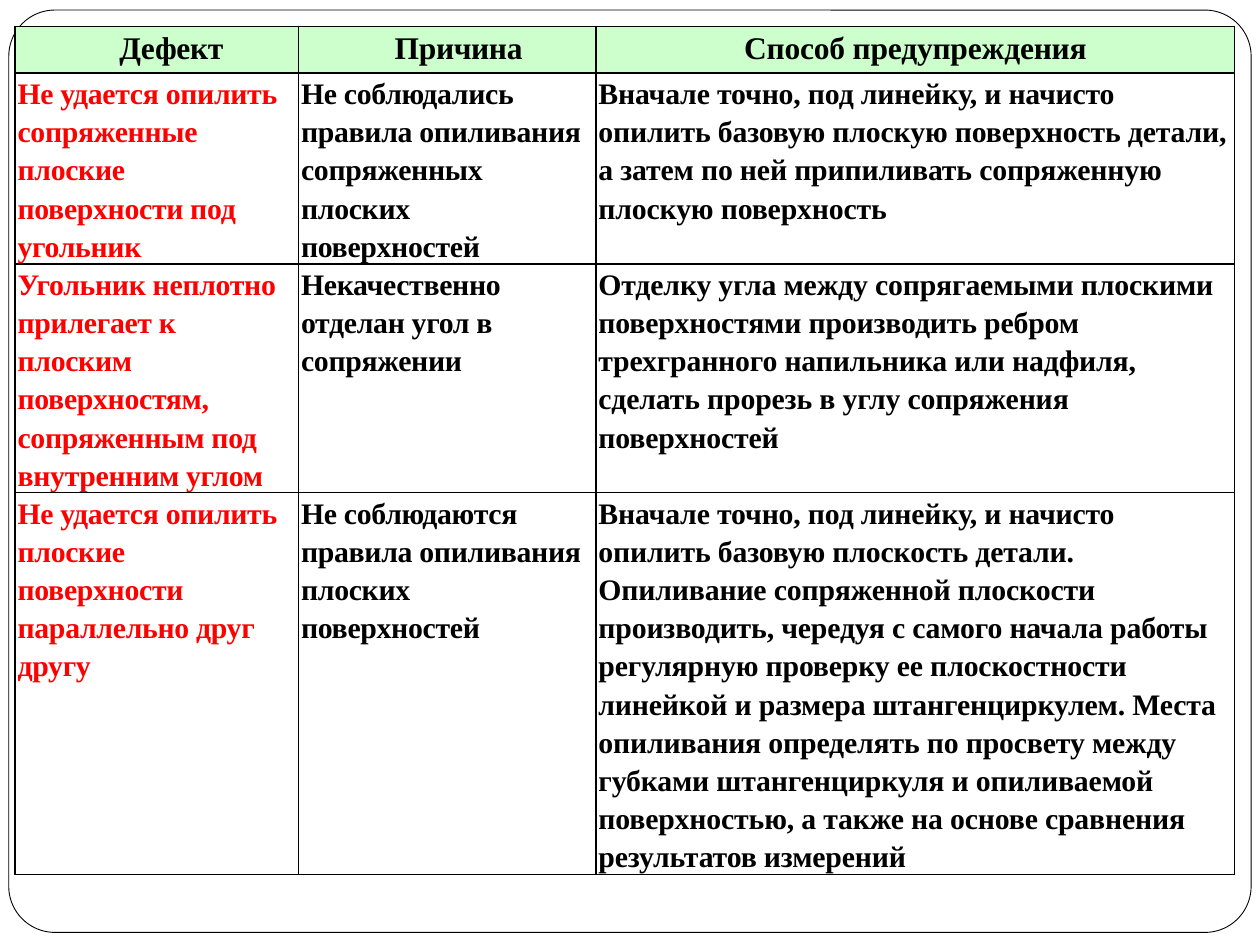
from pptx import Presentation
from pptx import util as u
from pptx.dml.color import RGBColor
from pptx.enum import shapes, text
from pptx.oxml import parse_xml
from pptx.oxml.ns import nsdecls

BLACK, RED, WHITE, GREEN = "000000", "FF0000", "FFFFFF", "CCFFCC"
HEADERS = ["Дефект", "Причина", "Способ предупреждения"]
DEFECTS = [
    ["Не удается опилить сопряженные плоские поверхности под угольник",
     "Не соблюдались правила опиливания сопряженных плоских поверхностей",
     "Вначале точно, под линейку, и начисто опилить базовую плоскую поверхность детали, "
     "а затем по ней припиливать сопряженную плоскую поверхность"],
    ["Угольник неплотно прилегает к плоским поверхностям, сопряженным под внутренним углом",
     "Некачественно отделан угол в сопряжении",
     "Отделку угла между сопрягаемыми плоскими поверхностями производить ребром трехгранного "
     "напильника или надфиля, сделать прорезь в углу сопряжения поверхностей"],
    ["Не удается опилить плоские поверхности параллельно друг другу",
     "Не соблюдаются правила опиливания плоских поверхностей",
     "Вначале точно, под линейку, и начисто опилить базовую плоскость детали. "
     "Опиливание сопряженной плоскости производить, чередуя с самого начала работы "
     "регулярную проверку ее плоскостности линейкой и размера штангенциркулем. "
     "Места опиливания определять по просвету между губками штангенциркуля и опиливаемой "
     "поверхностью, а также на основе сравнения результатов измерений"],
]
COLUMN_WIDTHS = [2.25, 2.36, 5.07]
ROW_HEIGHTS = [0.37, 1.51, 1.81, 3.02]
HEADER_INDENTS = [0.23, 0.18, 0]
LETTER_SPACING = [-20, -20, -10]


def color(value):
    return RGBColor.from_string(value)


class DefectSlide:
    """Holds the text style and the slide, and draws the frame and the table."""

    font_name = "Times New Roman"

    def __init__(self, presentation):
        self.slide = presentation.slides.add_slide(presentation.slide_layouts[6])

    def frame(self, left, top, width, height):
        shape = self.slide.shapes.add_shape(
            shapes.MSO_SHAPE.ROUNDED_RECTANGLE,
            *map(u.Inches, (left, top, width, height)))
        shape.adjustments[0] = 0.05
        shape.shadow.inherit = False
        shape.fill.solid()
        shape.fill.fore_color.rgb = color(WHITE)
        shape.line.color.rgb = color(BLACK)
        shape.line.width = u.Pt(0.5)

    def table(self, left, top, rows):
        table = self.slide.shapes.add_table(
            len(rows), len(COLUMN_WIDTHS), u.Inches(left), u.Inches(top),
            u.Inches(sum(COLUMN_WIDTHS)), u.Inches(sum(ROW_HEIGHTS))).table
        table.first_row = table.horz_banding = False
        for column, width in zip(table.columns, COLUMN_WIDTHS):
            column.width = u.Inches(width)
        for row, height in zip(table.rows, ROW_HEIGHTS):
            row.height = u.Inches(height)
        for row_index, row in enumerate(rows):
            for column_index, wording in enumerate(row):
                cell = table.cell(row_index, column_index)
                self.cell(cell, wording, row_index == 0, column_index)

    def cell(self, cell, wording, is_header, column_index):
        cell.margin_left = cell.margin_right = u.Inches(0.02)
        cell.margin_top = cell.margin_bottom = 0
        cell.fill.solid()
        cell.fill.fore_color.rgb = color(GREEN if is_header else WHITE)
        self.borders(cell)
        cell.text = wording
        paragraph = cell.text_frame.paragraphs[0]
        paragraph.line_spacing = 1.15
        paragraph.font.name = self.font_name
        paragraph.font.size = u.Pt(18 if is_header else 17)
        paragraph.font.bold = True
        is_defect = column_index == 0 and not is_header
        paragraph.font.color.rgb = color(RED if is_defect else BLACK)
        properties = paragraph._p.get_or_add_pPr()
        properties.get_or_add_defRPr().set("spc", str(LETTER_SPACING[column_index]))
        if is_header:
            paragraph.alignment = text.PP_ALIGN.CENTER
            properties.set("marL", str(u.Inches(HEADER_INDENTS[column_index])))

    def borders(self, cell):
        properties = cell._tc.get_or_add_tcPr()
        for position, side in enumerate("LRTB"):
            properties.insert(position, parse_xml(
                f'<a:ln{side} {nsdecls("a")} w="{u.Pt(1)}"><a:solidFill>'
                f'<a:srgbClr val="{BLACK}"/></a:solidFill></a:ln{side}>'))


def main():
    presentation = Presentation()
    presentation.slide_width = u.Inches(10)
    presentation.slide_height = u.Inches(7.5)
    slide = DefectSlide(presentation)
    slide.frame(0.07, 0.08, 9.86, 7.32)
    slide.table(0.12, 0.21, [HEADERS, *DEFECTS])
    presentation.save("out.pptx")


if __name__ == "__main__":
    main()
